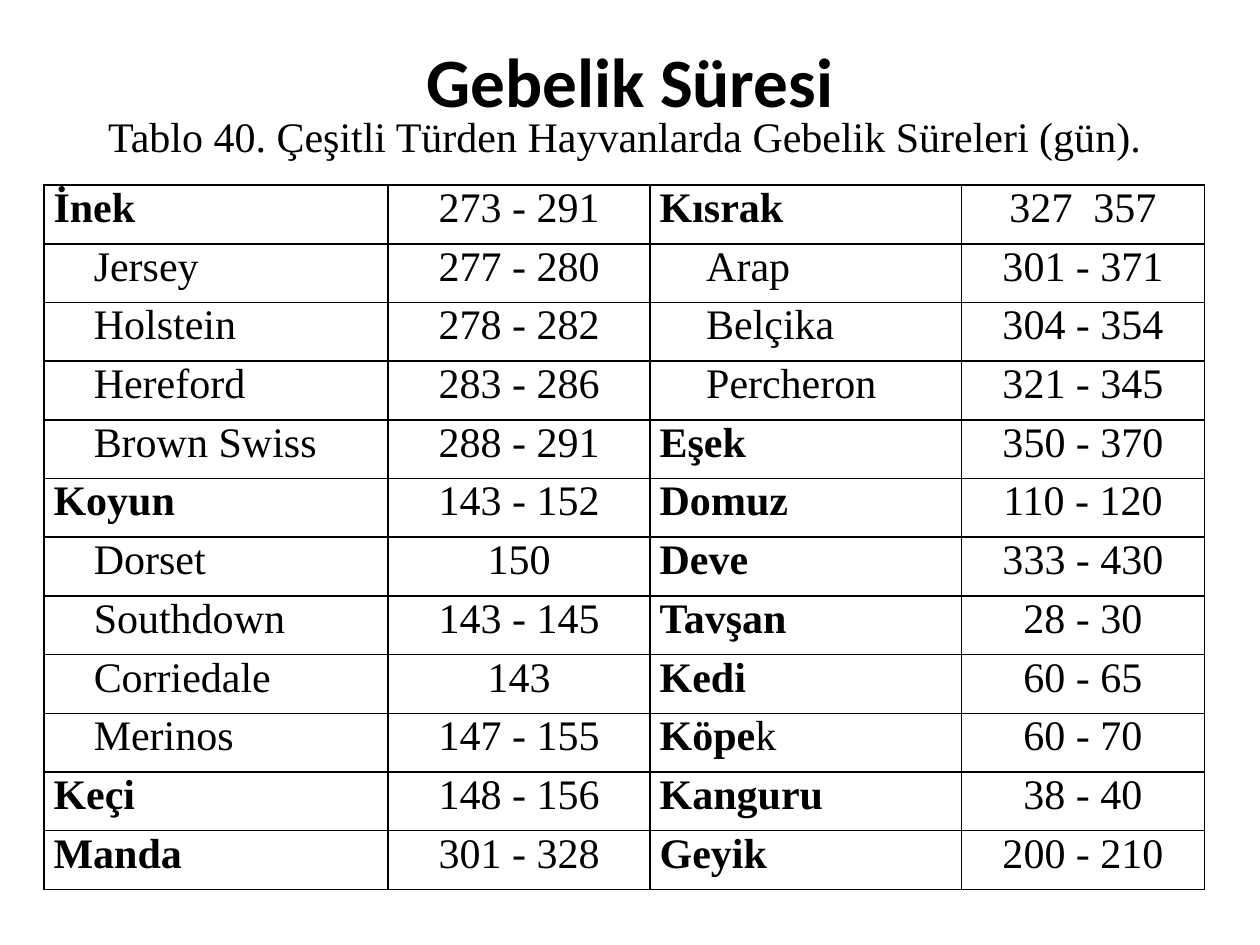
from dataclasses import dataclass

import pptx
import pptx.dml.color
import pptx.enum.text
import pptx.oxml
import pptx.oxml.ns
import pptx.util

Pt = pptx.util.Pt
Align = pptx.enum.text.PP_ALIGN
Anchor = pptx.enum.text.MSO_ANCHOR
Fit = pptx.enum.text.MSO_AUTO_SIZE


@dataclass(frozen=True)
class Theme:
    ink: str = "000000"
    head: str = "Calibri"
    body: str = "Times New Roman"
    large: float = 39.6
    normal: float = 24
    line: float = 1


THEME = Theme()
WIDTHS = (196.6, 149.8, 177.8, 139)
HEIGHT = 33.55
INDENTS = (23, 26.6)  # breed names, left and right half
# Each half lists (name, days, is a species)
LEFT = (
    ("İnek", "273 - 291", True),
    ("Jersey", "277 - 280", False),
    ("Holstein", "278 - 282", False),
    ("Hereford", "283 - 286", False),
    ("Brown Swiss", "288 - 291", False),
    ("Koyun", "143 - 152", True),
    ("Dorset", "150", False),
    ("Southdown", "143 - 145", False),
    ("Corriedale", "143", False),
    ("Merinos", "147 - 155", False),
    ("Keçi", "148 - 156", True),
    ("Manda", "301 - 328", True),
)
RIGHT = (
    ("Kısrak", "327  357", True),
    ("Arap", "301 - 371", False),
    ("Belçika", "304 - 354", False),
    ("Percheron", "321 - 345", False),
    ("Eşek", "350 - 370", True),
    ("Domuz", "110 - 120", True),
    ("Deve", "333 - 430", True),
    ("Tavşan", "28 - 30", True),
    ("Kedi", "60 - 65", True),
    ("Köpe", "60 - 70", True),
    ("Kanguru", "38 - 40", True),
    ("Geyik", "200 - 210", True),
)


def style(run, face, size, bold=False):
    run.font.name = face
    run.font.size = Pt(size)
    run.font.bold = bold
    run.font.color.rgb = pptx.dml.color.RGBColor.from_string(THEME.ink)


def write(frame, text, align, face=THEME.body, size=THEME.normal, bold=False):
    frame.text = text
    para = frame.paragraphs[0]
    para.alignment = align
    style(para.runs[0], face, size, bold)
    return para


def add_title(slide, text):
    title = slide.shapes.title
    title.left, title.top, title.width, title.height = map(Pt, (36, 21.6, 648, 90))
    frame = title.text_frame
    frame.auto_size = Fit.NONE
    frame.vertical_anchor = Anchor.TOP
    frame.margin_top = 0
    write(frame, text, Align.CENTER, THEME.head, THEME.large, True)


def add_caption(slide, text):
    box = slide.shapes.add_textbox(*map(Pt, (54.7, 59.8, 609.8, 36)))
    frame = box.text_frame
    frame.word_wrap = False
    frame.auto_size = Fit.SHAPE_TO_FIT_TEXT
    frame.vertical_anchor = Anchor.MIDDLE
    write(frame, text, Align.JUSTIFY)


def frame_cell(cell):
    """Give the cell its margins, four borders and no fill."""
    cell.margin_left = cell.margin_right = Pt(5.4)
    cell.margin_top = cell.margin_bottom = 0
    props = cell._tc.get_or_add_tcPr()
    for side in ("lnL", "lnR", "lnT", "lnB"):
        props.append(pptx.oxml.parse_xml(
            f'<a:{side} {pptx.oxml.ns.nsdecls("a")} w="{Pt(THEME.line)}">'
            f'<a:solidFill><a:srgbClr val="{THEME.ink}"/></a:solidFill></a:{side}>'))
    cell.fill.background()


def fill_half(table, first, rows, indent):
    for i, (name, days, species) in enumerate(rows):
        label, value = table.cell(i, first), table.cell(i, first + 1)
        para = write(label.text_frame, name, Align.JUSTIFY, bold=species)
        if not species:
            para._p.get_or_add_pPr().set("marL", str(Pt(indent)))
        write(value.text_frame, days, Align.CENTER)
        frame_cell(label)
        frame_cell(value)


def add_days(slide):
    count = len(LEFT)
    table = slide.shapes.add_table(
        count, len(WIDTHS), Pt(25.2), Pt(105.8),
        Pt(sum(WIDTHS)), Pt(HEIGHT * count)).table
    table.first_row = table.horz_banding = False
    for col, width in zip(table.columns, WIDTHS):
        col.width = Pt(width)
    for row in table.rows:
        row.height = Pt(HEIGHT)
    for half, rows in enumerate((LEFT, RIGHT)):
        fill_half(table, 2 * half, rows, INDENTS[half])
    # The last letter of "Köpek" is not bold
    tail = table.cell(9, 2).text_frame.paragraphs[0].add_run()
    tail.text = "k"
    style(tail, THEME.body, THEME.normal)


def main():
    deck = pptx.Presentation()
    deck.slide_width, deck.slide_height = Pt(720), Pt(540)
    slide = deck.slides.add_slide(deck.slide_layouts[5])
    add_title(slide, "Gebelik Süresi")
    add_caption(slide, "Tablo 40. Çeşitli Türden Hayvanlarda Gebelik Süreleri (gün).")
    add_days(slide)
    deck.save("out.pptx")


if __name__ == "__main__":
    main()
